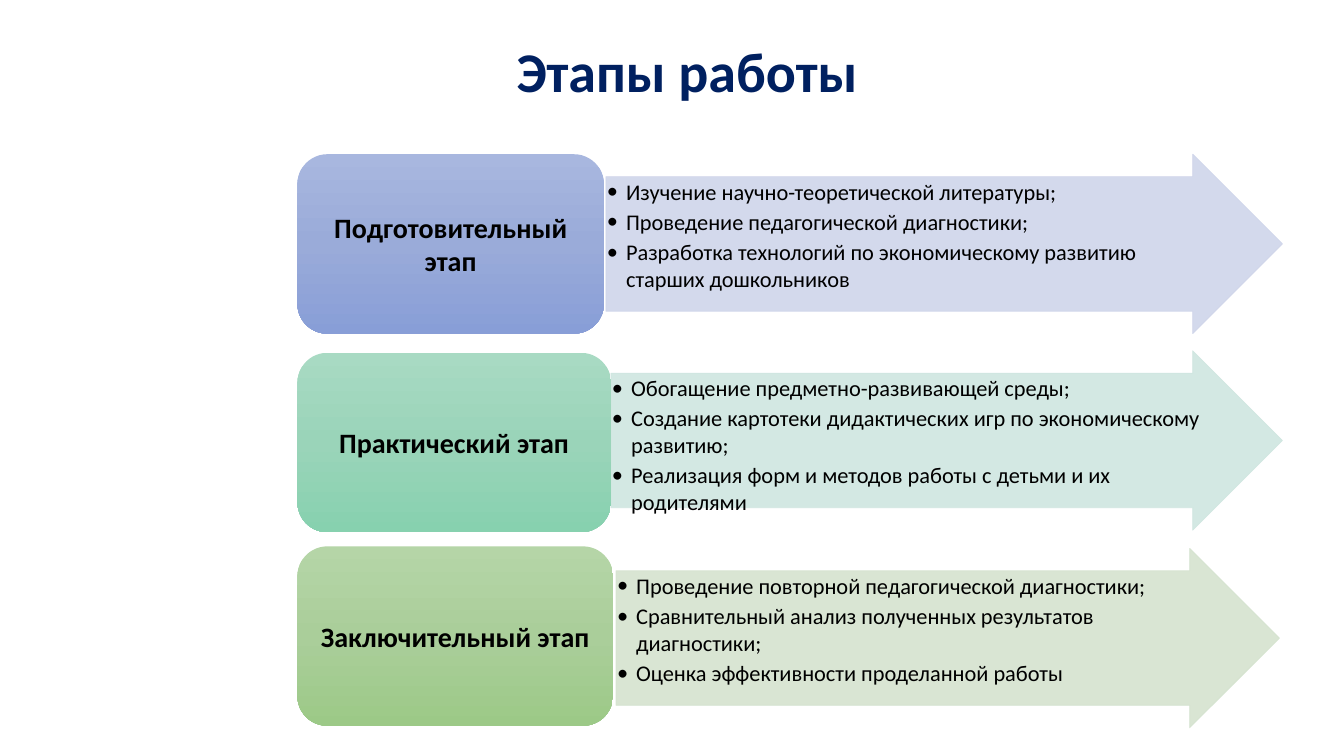
from copy import deepcopy

from lxml.etree import SubElement
from pptx import Presentation
from pptx.dml.color import RGBColor
from pptx.enum.shapes import MSO_SHAPE as Preset
from pptx.enum.text import MSO_ANCHOR as Anchor, PP_ALIGN as Align
from pptx.oxml.ns import qn
from pptx.util import Inches, Pt

NAVY = RGBColor(0x00, 0x20, 0x60)
BLACK = RGBColor(0x00, 0x00, 0x00)
BLUES = [RGBColor(0xA8, 0xB7, 0xDF), RGBColor(0x9A, 0xAB, 0xD9), RGBColor(0x88, 0x9E, 0xD7)]
TEALS = [RGBColor(0xA8, 0xDA, 0xC3), RGBColor(0x9A, 0xD4, 0xB9), RGBColor(0x87, 0xD1, 0xAF)]
GREENS = [RGBColor(0xB5, 0xD5, 0xA7), RGBColor(0xAA, 0xCE, 0x9A), RGBColor(0x9C, 0xC9, 0x87)]
PALE_BLUE = RGBColor(0xCF, 0xD5, 0xEA)
PALE_TEAL = RGBColor(0xCF, 0xE6, 0xE0)
PALE_GREEN = RGBColor(0xD5, 0xE3, 0xCF)

ROW_HEIGHT = 1.78
LABEL_LEFT = 2.95
STAGES = [
    ("Подготовительный этап", BLUES, PALE_BLUE, (1.53, 3.04), (6.01, 1.53, 6.71), 6.04, [
        "Изучение научно-теоретической литературы;",
        "Проведение педагогической диагностики;",
        "Разработка технологий по экономическому развитию старших дошкольников",
    ]),
    ("Практический этап", TEALS, PALE_TEAL, (3.5, 3.11), (6.06, 3.48, 6.66), 5.99, [
        "Обогащение предметно-развивающей среды;",
        "Создание картотеки дидактических игр по экономическому развитию;",
        "Реализация форм и методов работы с детьми и их родителями",
    ]),
    ("Заключительный этап", GREENS, PALE_GREEN, (5.42, 3.13), (6.11, 5.44, 6.58), 5.91, [
        "Проведение повторной педагогической диагностики;",
        "Сравнительный анализ полученных результатов диагностики;",
        "Оценка эффективности проделанной работы",
    ]),
]


def apply(target, values):
    for name, value in values.items():
        setattr(target, name, value)


class StageSlide:
    font = "Calibri"

    def __init__(self, deck):
        self.page = deck.slides.add_slide(deck.slide_layouts[6])

    def text(self, area, lines, size, color=BLACK, bold=False, bullet=False,
             frame_format=None, para_format=None):
        box = self.page.shapes.add_textbox(*map(Inches, area))
        frame = box.text_frame
        apply(frame, {"word_wrap": True, **(frame_format or {})})
        for index, line in enumerate(lines):
            para = frame.add_paragraph() if index else frame.paragraphs[0]
            apply(para, para_format or {})
            if bullet:
                props = para._p.get_or_add_pPr()
                props.set("marL", str(Inches(0.19)))
                props.set("indent", str(-Inches(0.19)))
                SubElement(props, qn("a:buFont")).set("typeface", self.font)
                SubElement(props, qn("a:buChar")).set("char", "•")
            span = para.add_run()
            span.text = line
            apply(span.font, {"name": self.font, "size": Pt(size), "bold": bold})
            span.font.color.rgb = color

    def shape(self, preset, area):
        shape = self.page.shapes.add_shape(preset, *map(Inches, area))
        shape.shadow.inherit = False
        return shape

    def arrow(self, area, color):
        shape = self.shape(Preset.RIGHT_ARROW, area)
        shape.adjustments[0] = 0.75
        shape.adjustments[1] = 0.5
        shape.line.width = Pt(0.5)
        for fill in (shape.fill, shape.line.fill):
            fill.solid()
            fill.fore_color.rgb = color
        for tone in shape._element.spPr.iter(qn("a:srgbClr")):
            SubElement(tone, qn("a:alpha")).set("val", "90000")

    def label(self, area, colors):
        shape = self.shape(Preset.ROUNDED_RECTANGLE, area)
        shape.line.fill.background()
        shape.fill.gradient()
        shape.fill.gradient_angle = 270
        stops = shape._element.spPr.find(qn("a:gradFill")).find(qn("a:gsLst"))
        stops.append(deepcopy(stops[-1]))
        for index, (stop, color) in enumerate(zip(shape.fill.gradient_stops, colors)):
            stop.position = index / 2
            stop.color.rgb = color

    def stage(self, title, colors, pale, label_place, arrow_place, text_width, points):
        left, top, width = arrow_place
        self.arrow((left, top, width, ROW_HEIGHT), pale)
        margins = dict.fromkeys(
            ("margin_left", "margin_right", "margin_top", "margin_bottom"), Inches(0.01))
        self.text((left, top + ROW_HEIGHT / 8, text_width, ROW_HEIGHT * 0.75), points, 16,
                  bullet=True, frame_format=margins, para_format={"space_after": Pt(2.4)})
        label_top, label_width = label_place
        self.label((LABEL_LEFT, label_top, label_width, ROW_HEIGHT), colors)
        inset = 0.09
        self.text((LABEL_LEFT + inset, label_top + inset,
                   label_width - 2 * inset, ROW_HEIGHT - 2 * inset), [title], 20, bold=True,
                  frame_format={"vertical_anchor": Anchor.MIDDLE,
                                "margin_left": Inches(0.08), "margin_right": Inches(0.08),
                                "margin_top": Inches(0.04), "margin_bottom": Inches(0.04)},
                  para_format={"alignment": Align.CENTER})


def main():
    deck = Presentation()
    apply(deck, {"slide_width": Inches(13.33), "slide_height": Inches(7.5)})
    slide = StageSlide(deck)
    slide.text((0.3, 0.39, 13.03, 0.83), ["Этапы работы"], 40, NAVY, bold=True,
               para_format={"alignment": Align.CENTER, "line_spacing": 0.9})
    for stage in STAGES:
        slide.stage(*stage)
    deck.save("out.pptx")


if __name__ == "__main__":
    main()
